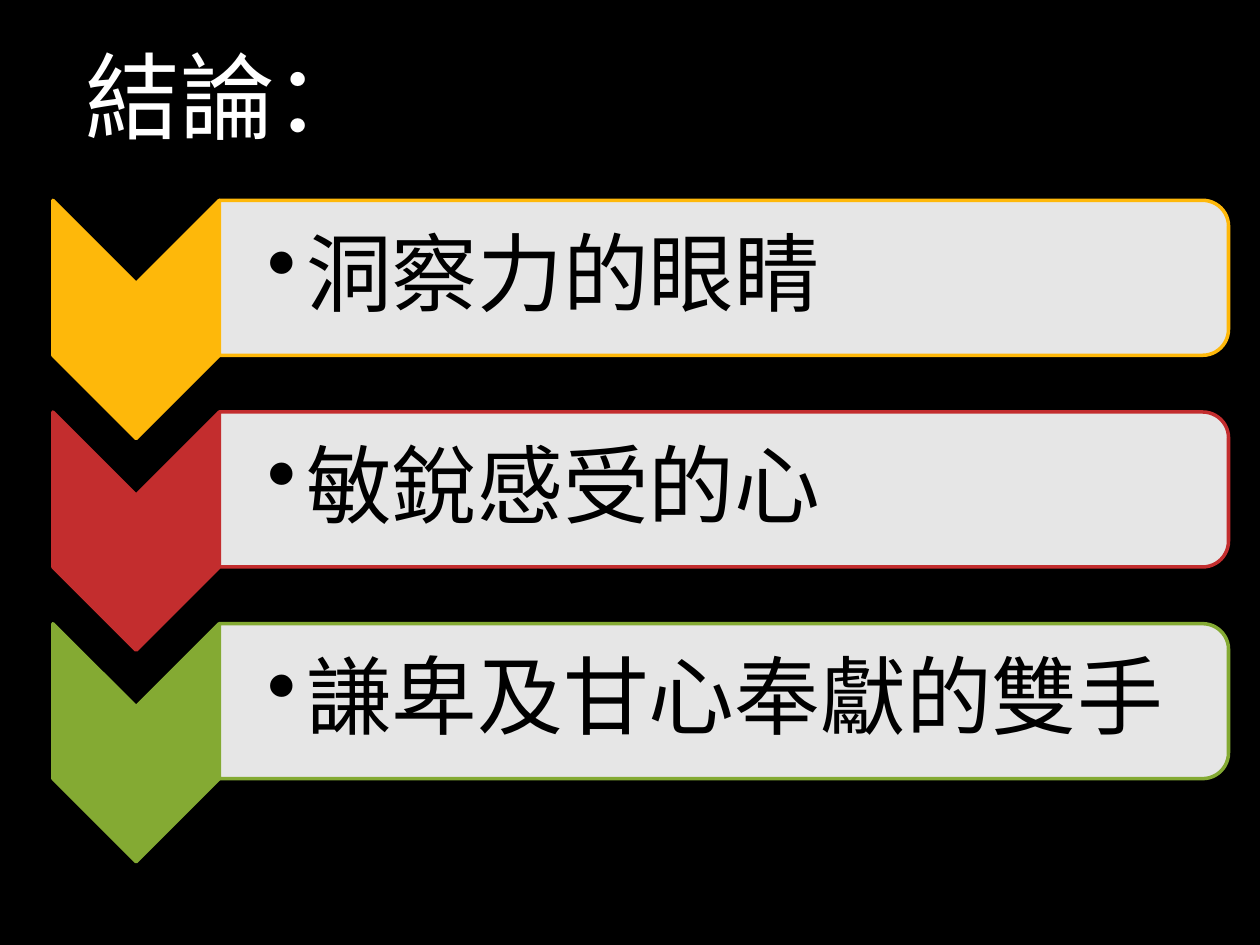
from lxml import etree
from pptx import Presentation
from pptx import util as u
from pptx.dml.color import RGBColor
from pptx.enum import shapes, text
from pptx.oxml.ns import qn

ROWS = [
    ("洞察力的眼睛", "FEB80A"),
    ("敏銳感受的心", "C32D2E"),
    ("謙卑及甘心奉獻的雙手", "84AA33"),
]
TOP, STEP = 1.59, 1.68
KIND = shapes.MSO_SHAPE


def color(code):
    return RGBColor.from_string(code)


def write(frame, words, size=49, ink="000000", wrap=True, bullet=False):
    frame.word_wrap = wrap
    frame.vertical_anchor = text.MSO_ANCHOR.MIDDLE
    para = frame.paragraphs[0]
    para.alignment = text.PP_ALIGN.LEFT
    if bullet:
        para.level = 1
        props = para._p.get_or_add_pPr()
        props.set("marL", str(u.Inches(0.31)))
        props.set("indent", str(u.Inches(-0.31)))
        etree.SubElement(props, qn("a:buChar")).set("char", "•")
        para.line_spacing = 0.9
    run = para.add_run()
    run.text = words
    run.font.name = "Roboto"
    run.font.size = u.Pt(size)
    run.font.color.rgb = color(ink)


def turned(slide, kind, box, fill, line, alpha=None):
    """Add a shape turned by 90 degrees that covers box as it is seen."""
    left, top, wide, high = box
    shape = slide.shapes.add_shape(
        kind, u.Inches(left + (wide - high) / 2),
        u.Inches(top + (high - wide) / 2), u.Inches(high), u.Inches(wide))
    shape.rotation = 90
    shape.shadow.inherit = False
    shape.fill.solid()
    shape.fill.fore_color.rgb = color(fill)
    shape.line.color.rgb = color(line)
    shape.line.width = u.Pt(2)
    if alpha:
        tint = shape.fill._xPr.find(".//" + qn("a:srgbClr"))
        etree.SubElement(tint, qn("a:alpha")).set("val", str(alpha * 1000))


def label(slide, words, top):
    box = slide.shapes.add_textbox(
        u.Inches(1.74), u.Inches(top), u.Inches(7.95), u.Inches(1.11))
    frame = box.text_frame
    frame.margin_left = u.Inches(0.38)
    frame.margin_top = frame.margin_right = frame.margin_bottom = u.Inches(0.03)
    write(frame, words, bullet=True)


def row(slide, index, words, hue):
    top = TOP + index * STEP
    turned(slide, KIND.CHEVRON, (0.42, top, 1.32, 1.89), hue, hue)
    turned(slide, KIND.ROUND_2_SAME_RECTANGLE, (1.74, top, 8.01, 1.23),
           "FFFFFF", hue, alpha=90)
    label(slide, words, top + 0.06)


def head(slide, words):
    title = slide.shapes.title
    title.left, title.top = u.Inches(0.58), u.Inches(0.25)
    title.width, title.height = u.Inches(2.47), u.Inches(1.01)
    write(title.text_frame, words, size=54, ink="FFFFFF", wrap=False)
    title.text_frame.auto_size = text.MSO_AUTO_SIZE.SHAPE_TO_FIT_TEXT


def main():
    deck = Presentation()
    deck.slide_width, deck.slide_height = u.Inches(10), u.Inches(7.5)
    slide = deck.slides.add_slide(deck.slide_layouts[5])
    slide.background.fill.solid()
    slide.background.fill.fore_color.rgb = color("000000")
    head(slide, "結論：")
    for index, (words, hue) in enumerate(ROWS):
        row(slide, index, words, hue)
    deck.save("out.pptx")


if __name__ == "__main__":
    main()
